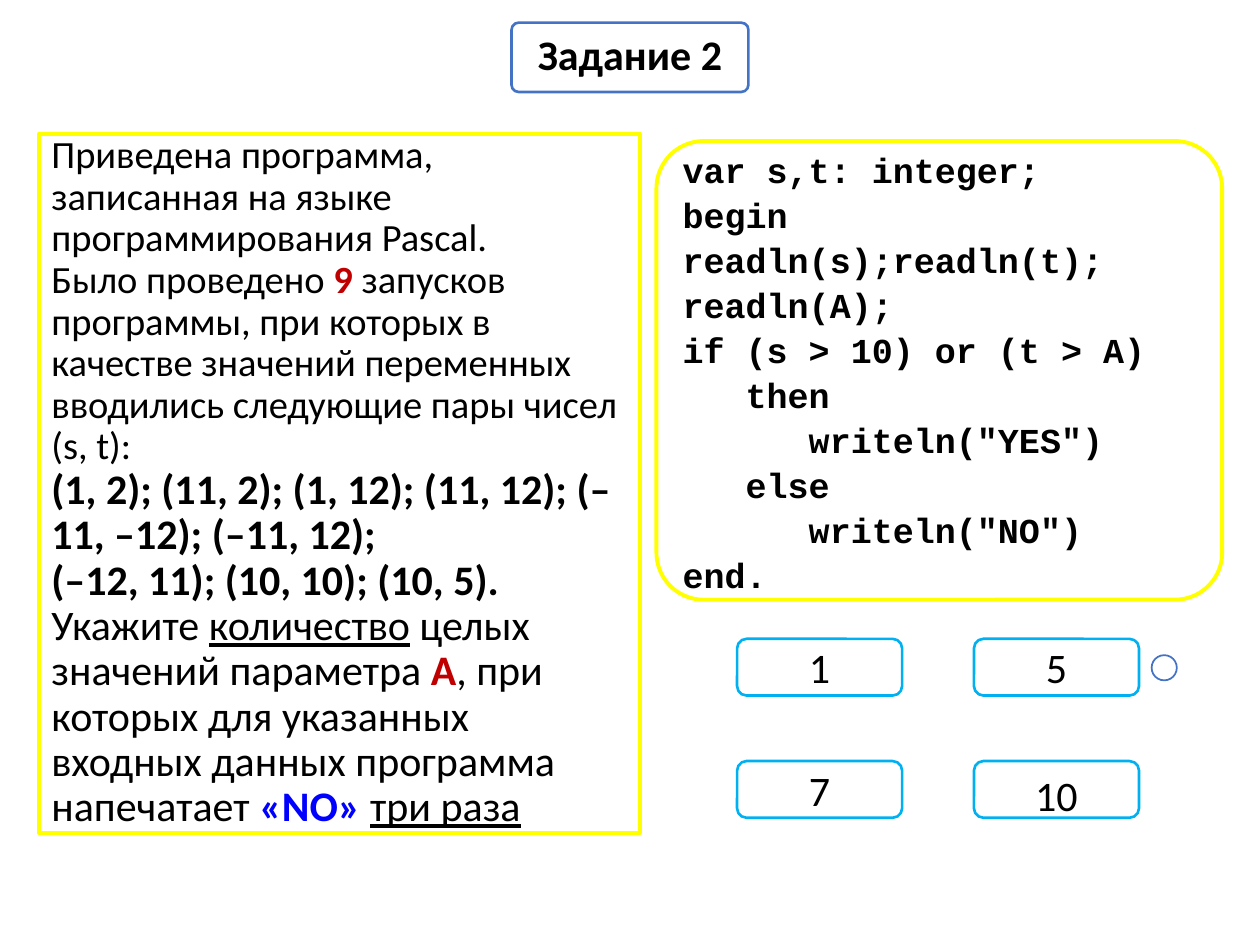
from dataclasses import dataclass

from pptx import Presentation
from pptx.dml.color import RGBColor
from pptx.enum.shapes import MSO_SHAPE
from pptx.enum.text import MSO_ANCHOR, PP_ALIGN
from pptx.util import Inches, Pt

COLORS = {
    "white": "FFFFFF",
    "black": "000000",
    "blue": "4472C4",
    "yellow": "FFFF00",
    "sky": "00B0F0",
    "red": "C00000",
    "quote": "0000FF",
}
CORNER = 0.103


@dataclass
class Span:
    text: str
    size: int = 24
    color: str = "black"
    bold: bool = False
    underline: bool = False


@dataclass
class Answer:
    text: str
    column: int
    row: int
    spacing: float = 1.0


TASK = [
    Span("Приведена программа, записанная на языке программирования Pascal. \n"
         "Было проведено ", size=22),
    Span("9", size=22, color="red", bold=True),
    Span(" запусков программы, при которых в качестве значений переменных "
         "вводились следующие пары чисел (s, t):\n", size=22),
    Span("(1, 2); (11, 2); (1, 12); (11, 12); (–11, –12); (–11, 12); \n"
         "(–12, 11); (10, 10); (10, 5).\n", bold=True),
    Span("Укажите "),
    Span("количество", underline=True),
    Span(" целых значений параметра "),
    Span("А", color="red", bold=True),
    Span(", при которых для указанных входных данных программа напечатает "),
    Span("«NO» ", color="quote", bold=True),
    Span("три раза", underline=True),
]

CODE = """var s,t: integer;
begin
readln(s);readln(t);
readln(A);
if (s > 10) or (t > А)
   then
      writeln("YES")
   else
      writeln("NO")
end."""

ANSWERS = [
    Answer("1", 0, 0),
    Answer("5", 1, 0),
    Answer("7", 0, 1),
    Answer("10", 1, 1, spacing=1.2),
]


def add_box(page, kind, left: float, top: float, width: float, height: float,
            line: str, weight: float, corner: float | None = None):
    box = page.shapes.add_shape(
        kind, Inches(left), Inches(top), Inches(width), Inches(height))
    box.shadow.inherit = False
    box.fill.solid()
    box.fill.fore_color.rgb = RGBColor.from_string(COLORS["white"])
    box.line.color.rgb = RGBColor.from_string(COLORS[line])
    box.line.width = Pt(weight)
    if corner is not None:
        box.adjustments[0] = corner
    return box


def write(box, paragraphs: list[list[Span]], *, font: str = "Calibri",
          align=PP_ALIGN.CENTER, spacing: float = 1.0) -> None:
    """Fill the box with paragraphs of spans; a newline in a span is a line break."""
    frame = box.text_frame
    frame.word_wrap = True
    frame.vertical_anchor = MSO_ANCHOR.MIDDLE
    for index, spans in enumerate(paragraphs):
        paragraph = frame.add_paragraph() if index else frame.paragraphs[0]
        paragraph.alignment = align
        paragraph.line_spacing = spacing
        for span in spans:
            for number, text in enumerate(span.text.split("\n")):
                if number:
                    paragraph.add_line_break()
                if not text:
                    continue
                run = paragraph.add_run()
                run.text = text
                run.font.name = font
                run.font.size = Pt(span.size)
                run.font.bold = span.bold
                run.font.underline = span.underline
                run.font.color.rgb = RGBColor.from_string(COLORS[span.color])


def main() -> None:
    deck = Presentation()
    deck.slide_width, deck.slide_height = Inches(10), Inches(7.5)
    page = deck.slides.add_slide(deck.slide_layouts[6])
    rounded = MSO_SHAPE.ROUNDED_RECTANGLE

    heading = add_box(page, rounded, 4.06, 0.18, 1.88, 0.55, "blue", 1.5, CORNER)
    write(heading, [[Span("Задание 2", bold=True)]], spacing=0.9)

    task = add_box(page, MSO_SHAPE.RECTANGLE, 0.31, 1.06, 4.77, 5.55, "yellow", 2.25)
    write(task, [TASK], align=PP_ALIGN.LEFT, spacing=0.9)

    code = add_box(page, rounded, 5.21, 1.12, 4.49, 3.64, "yellow", 2.25, CORNER)
    write(code, [[Span(line, size=20, bold=True)] for line in CODE.split("\n")],
          font="Courier New", align=PP_ALIGN.LEFT, spacing=1.07)

    for answer in ANSWERS:
        box = add_box(page, rounded, 5.85 + 1.88 * answer.column,
                      5.07 + 0.97 * answer.row, 1.31, 0.45, "sky", 1.5)
        write(box, [[Span(answer.text)]], spacing=answer.spacing)

    add_box(page, MSO_SHAPE.OVAL, 9.14, 5.2, 0.2, 0.2, "blue", 1)
    deck.save("out.pptx")


if __name__ == "__main__":
    main()
